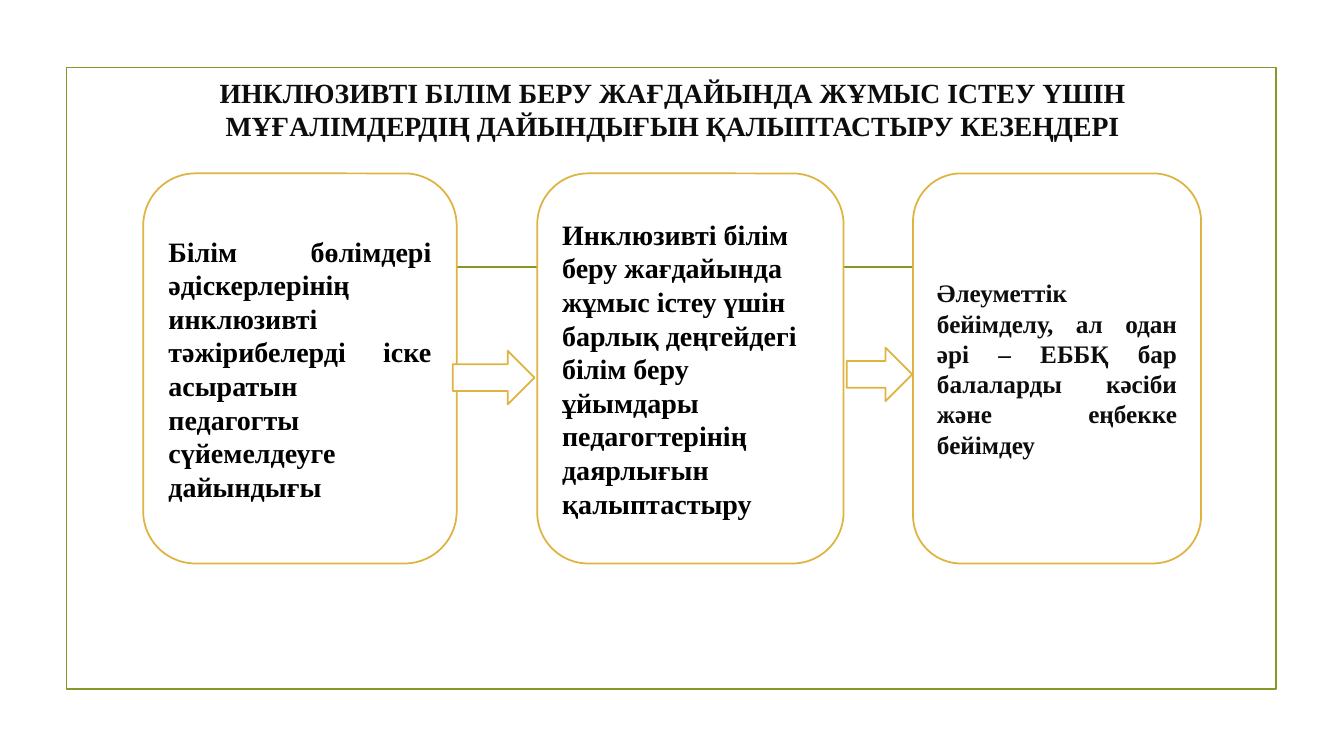
from dataclasses import dataclass

from lxml import etree
from pptx import Presentation
from pptx.dml.color import RGBColor
from pptx.enum.shapes import MSO_CONNECTOR, MSO_SHAPE
from pptx.enum.text import MSO_ANCHOR, MSO_AUTO_SIZE, PP_ALIGN
from pptx.oxml.ns import qn
from pptx.util import Cm, Pt

RECTANGLE = MSO_SHAPE.RECTANGLE
ROUNDED = MSO_SHAPE.ROUNDED_RECTANGLE
RIGHT_ARROW = MSO_SHAPE.RIGHT_ARROW
STRAIGHT = MSO_CONNECTOR.STRAIGHT
MIDDLE, BOTTOM = MSO_ANCHOR.MIDDLE, MSO_ANCHOR.BOTTOM
LEFT, CENTER, JUSTIFY = PP_ALIGN.LEFT, PP_ALIGN.CENTER, PP_ALIGN.JUSTIFY
NO_AUTOFIT = MSO_AUTO_SIZE.NONE
TITLE_ONLY = 5


@dataclass(frozen=True)
class Theme:
    """Colours, font and sizes of the slide."""
    white: RGBColor = RGBColor(0xFF, 0xFF, 0xFF)
    black: RGBColor = RGBColor(0, 0, 0)
    ink: RGBColor = RGBColor(0x0D, 0x0D, 0x0D)
    green: RGBColor = RGBColor(0x83, 0x99, 0x2A)
    gold: RGBColor = RGBColor(0xDE, 0xB3, 0x40)
    font: str = "Times New Roman"
    title_size: float = 19.8
    large_size: float = 20
    small_size: float = 18
    line_width: float = 1.25


THEME = Theme()

TITLE = ("ИНКЛЮЗИВТІ БІЛІМ БЕРУ ЖАҒДАЙЫНДА ЖҰМЫС ІСТЕУ ҮШІН "
         "МҰҒАЛІМДЕРДІҢ ДАЙЫНДЫҒЫН ҚАЛЫПТАСТЫРУ КЕЗЕҢДЕРІ")

STAGES = [
    (0, 7.9, JUSTIFY, THEME.large_size, THEME.black,
     "Білім бөлімдері әдіскерлерінің инклюзивті тәжірибелерді іске асыратын "
     "педагогты сүйемелдеуге дайындығы"),
    (9.93, 7.72, LEFT, THEME.large_size, THEME.black,
     "Инклюзивті білім беру жағдайында жұмыс істеу үшін барлық деңгейдегі "
     "білім беру ұйымдары педагогтерінің даярлығын қалыптастыру"),
    (19.4, 7.26, JUSTIFY, THEME.small_size, THEME.ink,
     "Әлеуметтік бейімделу, ал одан әрі – ЕББҚ бар балаларды кәсіби және "
     "еңбекке бейімдеу"),
]

ARROWS = [(7.8, 4.47, 2.06), (17.73, 4.39, 1.65)]
ARROW_HEIGHT = 1.35


def add_outlined(page, kind, box, color):
    """Add a white shape with a coloured outline."""
    shape = page.shapes.add_shape(kind, *(Cm(length) for length in box))
    shape.shadow.inherit = False
    shape.fill.solid()
    shape.fill.fore_color.rgb = THEME.white
    shape.line.color.rgb = color
    shape.line.width = Pt(THEME.line_width)
    return shape


def write(shape, text, size, color, align, anchor):
    """Fill a shape with one bold paragraph."""
    frame = shape.text_frame
    frame.text = text
    frame.word_wrap = True
    frame.auto_size = NO_AUTOFIT
    frame.vertical_anchor = anchor
    para = frame.paragraphs[0]
    para.alignment = align
    font = para.runs[0].font
    font.name = THEME.font
    font.size = Pt(size)
    font.bold = True
    font.color.rgb = color


def add_backdrop(page, box):
    """Draw the green frame and the rule across it."""
    left, top, width, _ = box
    border = add_outlined(page, RECTANGLE, box, THEME.green)
    border.fill.background()
    inset, drop = 2.19, 5.03
    rule = page.shapes.add_connector(
        STRAIGHT, Cm(left + inset), Cm(top + drop),
        Cm(left + width - inset), Cm(top + drop))
    rule.line.color.rgb = THEME.green
    rule.line.width = Pt(THEME.line_width)
    etree.SubElement(rule._element.spPr, qn("a:effectLst"))


def add_title(page, box):
    """Place the heading in the title placeholder, in front of the frame."""
    title = page.shapes.title
    title.left, title.top, title.width, title.height = (
        Cm(length) for length in box)
    write(title, TITLE, THEME.title_size, THEME.ink, CENTER, BOTTOM)
    title.text_frame.margin_bottom = Cm(0.79)
    page.shapes._spTree.append(title._element)


def add_stages(page, box):
    """Lay out the stage cards and the arrows between them."""
    left, top, _, height = box
    for offset, width, align, size, color, text in STAGES:
        card = add_outlined(
            page, ROUNDED, (left + offset, top, width, height), THEME.gold)
        write(card, text, size, color, align, MIDDLE)
    for offset, drop, width in ARROWS:
        add_outlined(page, RIGHT_ARROW,
                     (left + offset, top + drop, width, ARROW_HEIGHT),
                     THEME.gold)


def main():
    """Build and save the slide."""
    deck = Presentation()
    deck.slide_width, deck.slide_height = Cm(33.87), Cm(19.05)
    page = deck.slides.add_slide(deck.slide_layouts[TITLE_ONLY])
    add_backdrop(page, (1.68, 1.7, 30.48, 15.67))
    add_title(page, (3.61, 2.72, 26.67, 1.65))
    add_stages(page, (3.61, 4.37, 26.66, 9.83))
    deck.save("out.pptx")


if __name__ == "__main__":
    main()
